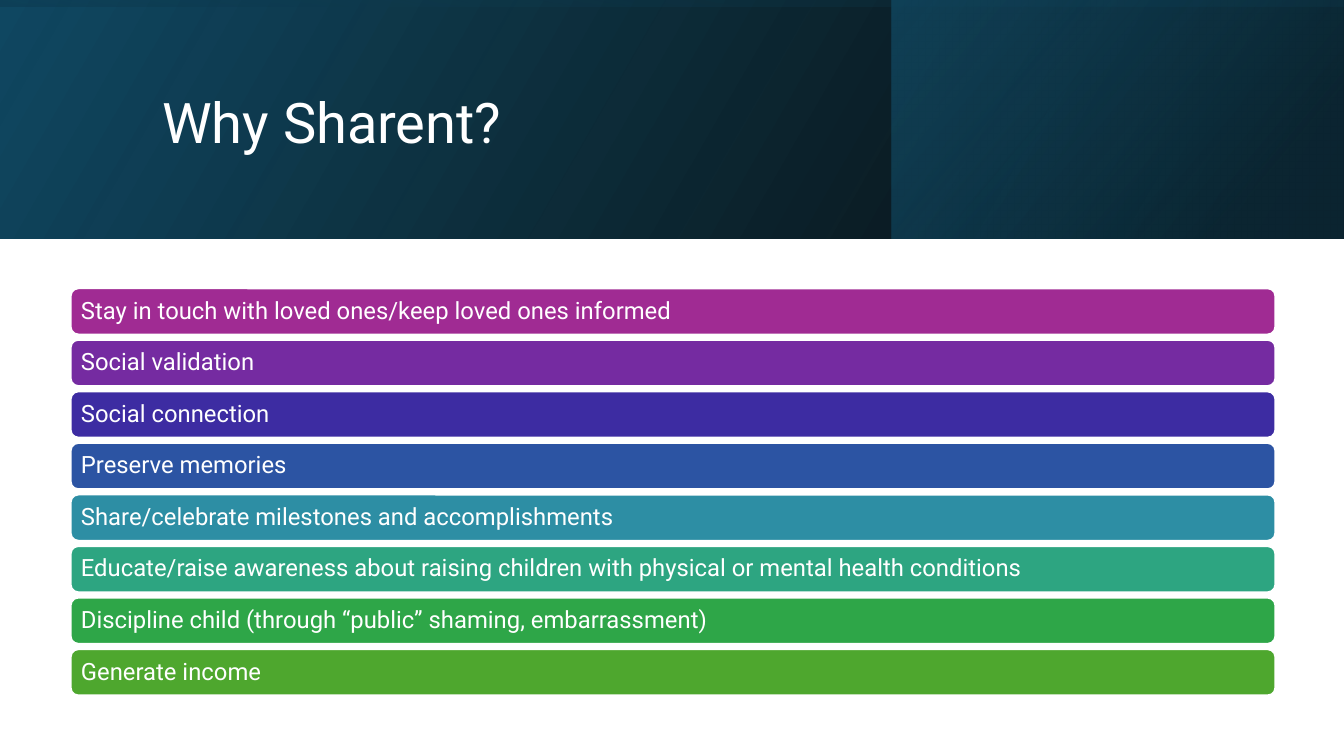
from pptx import Presentation
from pptx.dml.color import RGBColor
from pptx.enum.shapes import MSO_SHAPE
from pptx.enum.text import MSO_ANCHOR, MSO_AUTO_SIZE, PP_ALIGN
from pptx.oxml import parse_xml
from pptx.oxml.ns import nsdecls
from pptx.util import Inches, Pt

WHITE = RGBColor(0xFF, 0xFF, 0xFF)
BLACK = RGBColor(0x00, 0x00, 0x00)
NAVY = RGBColor(0x10, 0x48, 0x62)
DEEP_TEAL = RGBColor(0x0B, 0x30, 0x41)
TEAL = RGBColor(0x15, 0x60, 0x82)
FONT = "Roboto"


def add_band(page, left, top, width, height, rotation, angle, stops):
    band = page.shapes.add_shape(
        MSO_SHAPE.RECTANGLE, Inches(left), Inches(top), Inches(width), Inches(height))
    band.shadow.inherit = False
    band.line.fill.background()
    band.rotation = rotation
    stop_xml = "".join(
        f'<a:gs pos="{position * 1000}"><a:srgbClr val="{color}">'
        f'<a:alpha val="{opacity * 1000}"/></a:srgbClr></a:gs>'
        for position, color, opacity in stops)
    gradient = parse_xml(
        f'<a:gradFill {nsdecls("a")} rotWithShape="1"><a:gsLst>{stop_xml}</a:gsLst>'
        f'<a:lin ang="{angle * 60000}" scaled="0"/></a:gradFill>')
    properties = band._element.spPr
    properties.xfrm.set("flipH", "1")
    properties.insert(2, gradient)


def write_text(frame, text, size, inset):
    frame.word_wrap = True
    frame.auto_size = MSO_AUTO_SIZE.NONE
    frame.vertical_anchor = MSO_ANCHOR.MIDDLE
    frame.margin_left = frame.margin_right = Inches(inset)
    frame.margin_top = frame.margin_bottom = Inches(0.05)
    para = frame.paragraphs[0]
    para.alignment = PP_ALIGN.LEFT
    para.line_spacing = 0.9
    span = para.add_run()
    span.text = text
    span.font.name = FONT
    span.font.size = Pt(size)
    span.font.color.rgb = WHITE


deck = Presentation()
deck.slide_width = Inches(13.33)
deck.slide_height = Inches(7.5)
page = deck.slides.add_slide(deck.slide_layouts[5])
page.background.fill.solid()
page.background.fill.fore_color.rgb = WHITE

add_band(page, 0, 0, 13.33, 2.37, 0, 330, [(0, BLACK, 96), (100, NAVY, 100)])
add_band(page, 8.84, 0, 4.48, 2.37, 0, 320, [(19, DEEP_TEAL, 68), (100, TEAL, 48)])
add_band(page, 5.48, -5.48, 2.37, 13.33, 270, 350, [(23, NAVY, 16), (99, BLACK, 45)])

title = page.shapes.title
title.left, title.top = Inches(1.51), Inches(0.38)
title.width, title.height = Inches(10.63), Inches(1.72)
write_text(title.text_frame, "Why Sharent?", 40, 0.1)
page.shapes._spTree.append(title._element)

reasons = [
    ("Stay in touch with loved ones/keep loved ones informed", RGBColor(0xA0, 0x2B, 0x93)),
    ("Social validation", RGBColor(0x75, 0x2B, 0xA1)),
    ("Social connection", RGBColor(0x3D, 0x2C, 0xA2)),
    ("Preserve memories", RGBColor(0x2C, 0x54, 0xA3)),
    ("Share/celebrate milestones and accomplishments", RGBColor(0x2D, 0x8E, 0xA4)),
    ("Educate/raise awareness about raising children with physical or mental health conditions",
     RGBColor(0x2D, 0xA5, 0x81)),
    ("Discipline child (through “public” shaming, embarrassment)", RGBColor(0x2E, 0xA6, 0x48)),
    ("Generate income", RGBColor(0x4E, 0xA7, 0x2E)),
]
first_top = 2.86
last_top = 6.44
pitch = (last_top - first_top) / (len(reasons) - 1)
for index, (reason, color) in enumerate(reasons):
    bar = page.shapes.add_shape(
        MSO_SHAPE.ROUNDED_RECTANGLE, Inches(0.7), Inches(first_top + index * pitch),
        Inches(11.95), Inches(0.46))
    bar.shadow.inherit = False
    bar.fill.solid()
    bar.fill.fore_color.rgb = color
    bar.line.color.rgb = WHITE
    bar.line.width = Pt(1.5)
    write_text(bar.text_frame, reason, 17, 0.08)

deck.save("out.pptx")
